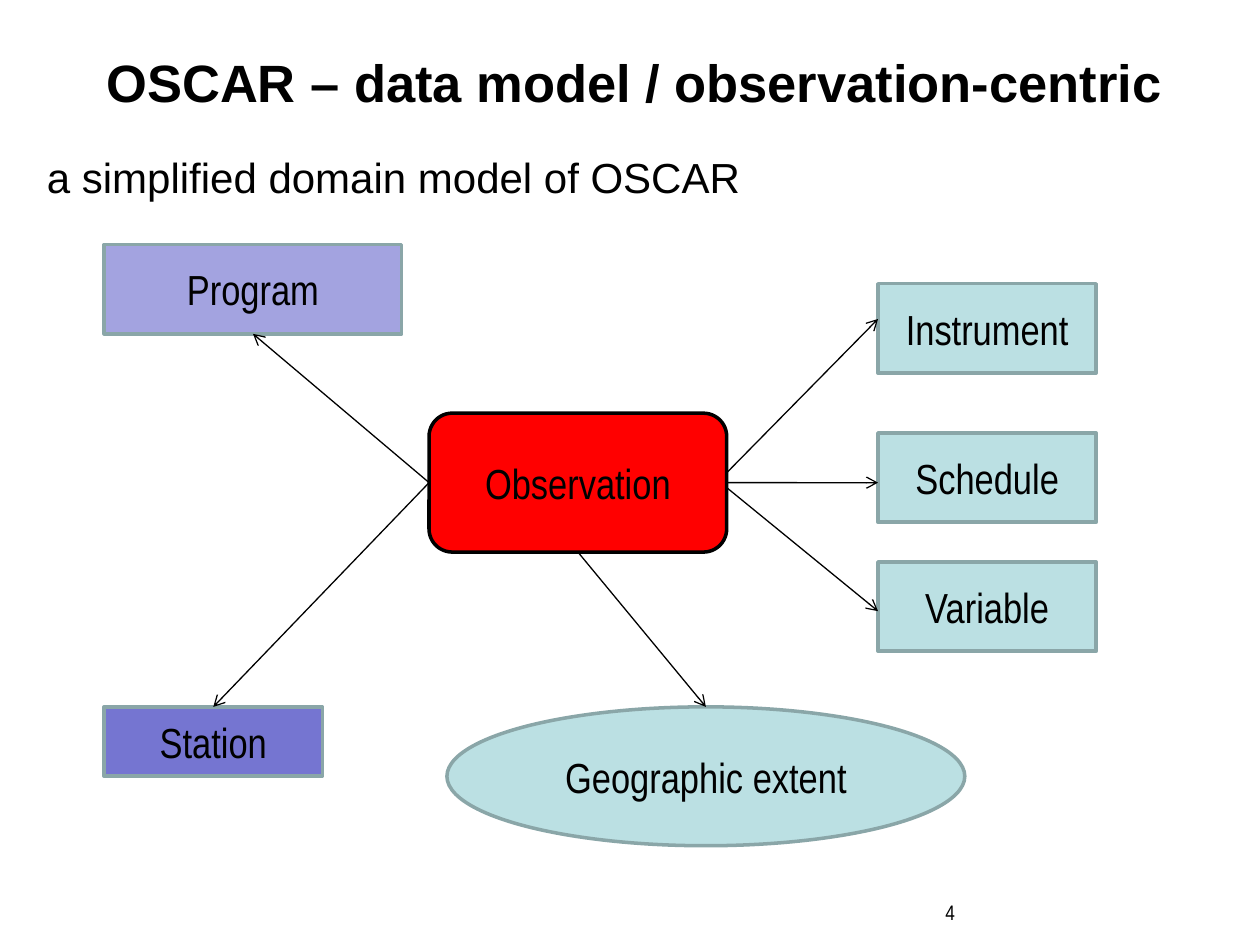
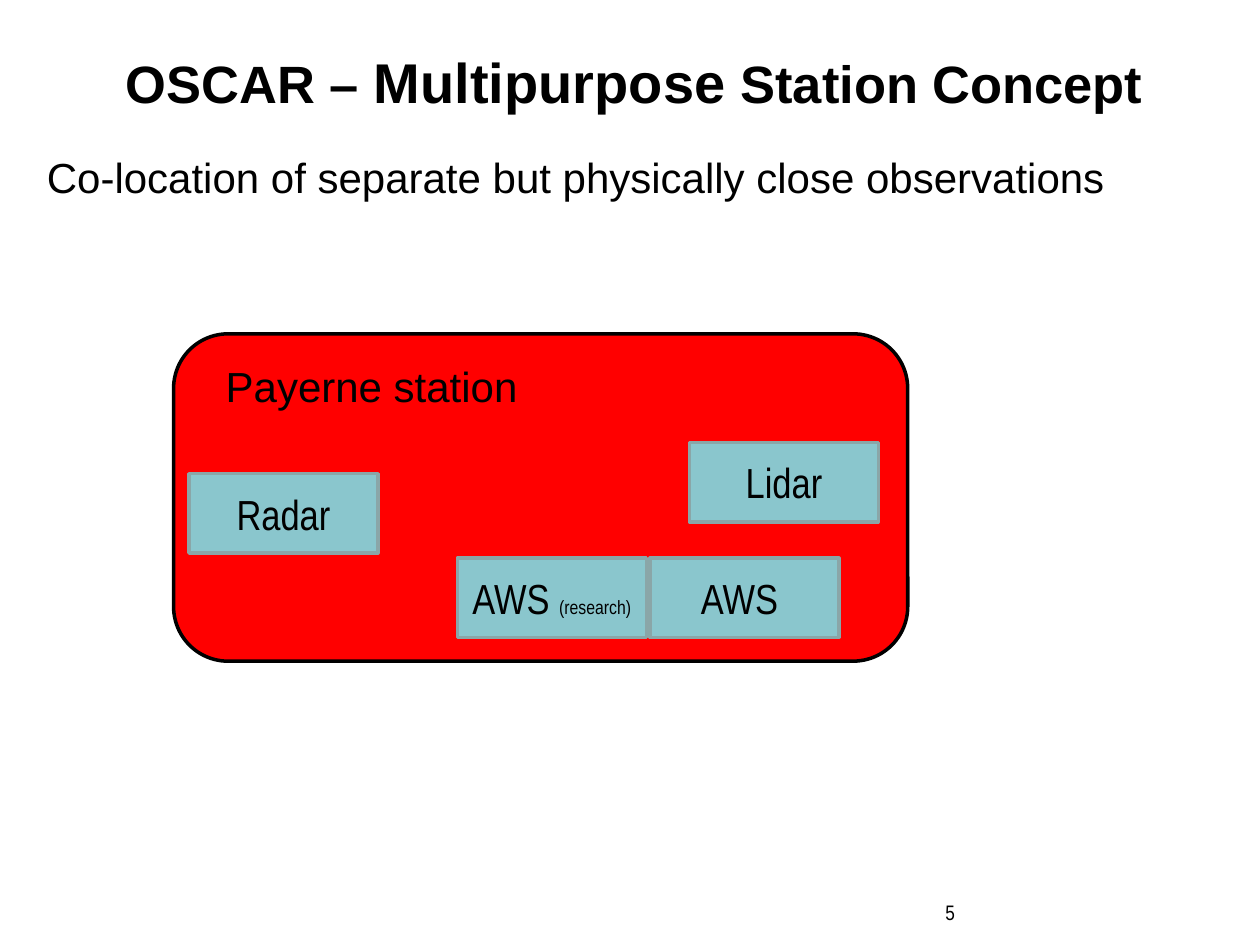
import pptx
import pptx.util
import pptx.dml.color
import pptx.enum.shapes
import pptx.enum.text
import pptx.oxml.ns
from lxml import etree

Cm, Pt = pptx.util.Cm, pptx.util.Pt
Shape = pptx.enum.shapes.MSO_SHAPE
Align = pptx.enum.text.PP_ALIGN
Anchor = pptx.enum.text.MSO_ANCHOR
qn = pptx.oxml.ns.qn

HUE = {"ink": "000000", "edge": "8AA6A8", "red": "FF0000", "pale": "BBE0E3",
       "teal": "8AC6CD", "lilac": "A3A3E0", "violet": "7575D1"}
WIDE, SLIM = "Arial", "Arial Narrow"

# Shared frames: left, top, width, height in cm
TITLE = (0.69, 0.53, 24.2, 2.21)
BODY = (0.69, 2.92, 24.2, 13.61)
PAGE = (16.3, 18.01, 3.2, 0.86)

# Text is a list of (words, size) runs
HEADS = [
    ([("OSCAR – data model / observation-centric", 30)],
     "a simplified domain model of OSCAR", 4),
    ([("OSCAR – ", 30), ("Multipurpose", 32), (" Station Concept", 30)],
     "Co-location of separate but physically close observations", 5),
]

# Data model: name -> form, fill, edge, frame
MODEL = {
    "Station": (Shape.RECTANGLE, "violet", "edge", (2.1, 14.25, 4.4, 1.4)),
    "Observation": (Shape.ROUNDED_RECTANGLE, "red", "ink", (8.65, 8.33, 6, 2.8)),
    "Program": (Shape.RECTANGLE, "lilac", "edge", (2.1, 4.93, 6, 1.8)),
    "Geographic extent": (Shape.OVAL, "pale", "edge", (9.01, 14.25, 10.44, 2.8)),
}
PARTS = {"Instrument": 5.72, "Schedule": 8.73, "Variable": 11.33}
for name, top in PARTS.items():
    MODEL[name] = (Shape.RECTANGLE, "pale", "edge", (17.7, top, 4.4, 1.8))

# Joined arrows: side of Observation, target, side of target
JOINS = [(2, "Geographic extent", 0), (1, "Program", 2), (1, "Station", 0)]
# Arrows to the parts: start and end heights, side of Observation if joined
FAN = [(9.53, 6.43, None), (9.73, 9.73, 3), (9.83, 12.32, None)]
FAN_X = (14.65, 17.7)

# Station concept: devices and their left, top
SITE = (3.5, 6.73, 14.8, 6.6)
LABEL = (4.3, 7.14, 6.6, 1.27)
GEAR_SIZE = (3.81, 1.6)
GEAR = [
    ([("Radar", 24)], (3.81, 9.55)),
    ([("Lidar", 24)], (13.9, 8.92)),
    ([("AWS ", 24)], (13.1, 11.25)),
    ([("AWS ", 24), ("(research)", 11), (" ", 24)], (9.22, 11.25)),
]


def tint(key):
    return pptx.dml.color.RGBColor.from_string(HUE[key])


def place(shape, frame):
    shape.left, shape.top, shape.width, shape.height = map(Cm, frame)


def write(shape, text, size=24, font=SLIM, bold=False,
          align=Align.CENTER, anchor=Anchor.MIDDLE):
    frame = shape.text_frame
    frame.word_wrap = True
    frame.auto_size = pptx.enum.text.MSO_AUTO_SIZE.NONE
    frame.vertical_anchor = anchor
    para = frame.paragraphs[0]
    para.alignment = align
    para.space_before = Pt(0)
    for words, points in [(text, size)] if isinstance(text, str) else text:
        run = para.add_run()
        run.text = words
        run.font.name, run.font.size, run.font.bold = font, Pt(points), bold
        run.font.color.rgb = tint("ink")
    return para


def add_box(slide, form, fill, edge, frame, text=None):
    box = slide.shapes.add_shape(form, *map(Cm, frame))
    box.shadow.inherit = False
    box.fill.solid()
    box.fill.fore_color.rgb = tint(fill)
    box.line.color.rgb = tint(edge)
    box.line.width = Pt(2)
    if text:
        write(box, text)
    return box


def add_arrow(slide, start=(0, 0), end=(0, 0)):
    kind = pptx.enum.shapes.MSO_CONNECTOR.STRAIGHT
    arrow = slide.shapes.add_connector(kind, *map(Cm, start + end))
    arrow.line.color.rgb = tint("ink")
    arrow.line.width = Pt(0.75)
    props = arrow.element.spPr
    etree.SubElement(props.find(qn("a:ln")), qn("a:tailEnd"), type="arrow")
    etree.SubElement(props, qn("a:effectLst"))
    return arrow


def add_slide(deck, title, lead, page):
    slide = deck.slides.add_slide(deck.slide_layouts[1])
    head, body = slide.placeholders
    place(head, TITLE)
    write(head, title, font=WIDE, bold=True)
    place(body, BODY)
    para = write(body, lead, font=WIDE, align=Align.LEFT, anchor=Anchor.TOP)
    props = para._p.get_or_add_pPr()
    props.set("marL", "0")
    props.set("indent", "0")
    etree.SubElement(props, qn("a:buNone"))
    foot = slide.shapes.add_textbox(*map(Cm, PAGE))
    write(foot, str(page), size=12, align=Align.RIGHT, anchor=Anchor.TOP)
    return slide


def draw_model(slide):
    boxes = {name: add_box(slide, *spot, text=name)
             for name, spot in MODEL.items()}
    hub = boxes["Observation"]
    for start, end, side in FAN:
        arrow = add_arrow(slide, (FAN_X[0], start), (FAN_X[1], end))
        if side is not None:
            arrow.begin_connect(hub, side)
    for side, name, port in JOINS:
        arrow = add_arrow(slide)
        arrow.begin_connect(hub, side)
        arrow.end_connect(boxes[name], port)


def draw_site(slide):
    add_box(slide, Shape.ROUNDED_RECTANGLE, "red", "ink", SITE)
    label = slide.shapes.add_textbox(*map(Cm, LABEL))
    write(label, "Payerne station", font=WIDE, align=Align.LEFT,
          anchor=Anchor.TOP)
    for text, spot in GEAR:
        add_box(slide, Shape.RECTANGLE, "teal", "edge", spot + GEAR_SIZE, text)


def main():
    deck = pptx.Presentation()
    deck.slide_width, deck.slide_height = Cm(25.4), Cm(19.05)
    for head, draw in zip(HEADS, (draw_model, draw_site)):
        draw(add_slide(deck, *head))
    deck.save("out.pptx")


if __name__ == "__main__":
    main()
